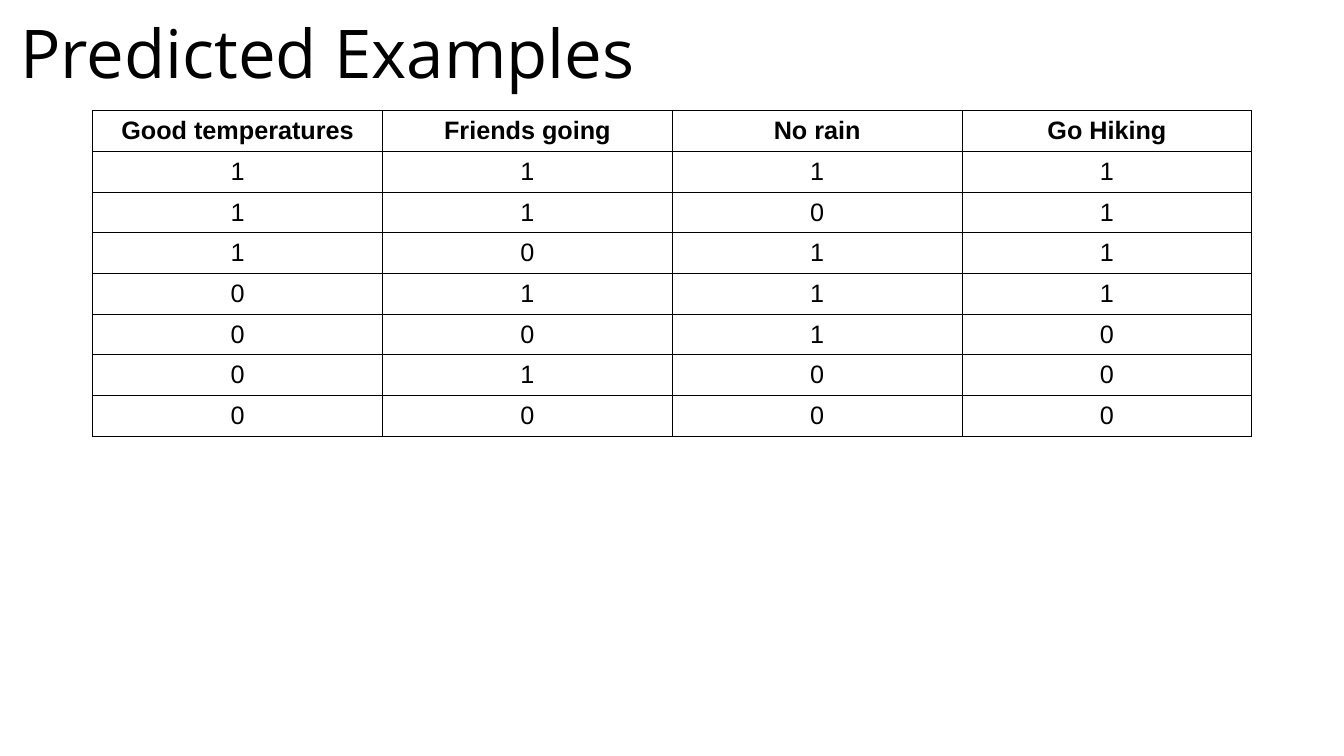
from lxml.etree import SubElement
from pptx import Presentation
from pptx.dml.color import RGBColor
from pptx.enum.text import MSO_ANCHOR as Anchor, MSO_AUTO_SIZE as Fit, PP_ALIGN as Align
from pptx.oxml.ns import qn
from pptx.util import Pt

BLACK = RGBColor(0, 0, 0)
HEADS = ["Good temperatures", "Friends going", "No rain", "Go Hiking"]
CASES = ["1111", "1101", "1011", "0111", "0010", "0100", "0000"]
ROWS = [HEADS] + [list(case) for case in CASES]
COL, ROW = Pt(207), Pt(29.05)


def style(item, form):
    for key, val in form.items():
        setattr(item, key, val)


def write(para, text, size, face, bold=False):
    run = para.add_run()
    run.text = text
    style(run.font, {"size": Pt(size), "name": face, "bold": bold})
    run.font.color.rgb = BLACK


deck = Presentation()
style(deck, {"slide_width": Pt(960), "slide_height": Pt(540)})
slide = deck.slides.add_slide(deck.slide_layouts[5])

title = slide.shapes.title
style(title, {"left": 0, "top": 0, "width": Pt(960), "height": Pt(81.36)})
inset = Pt(14.4)
style(title.text_frame, {
    "margin_left": inset, "margin_right": inset,
    "margin_top": inset, "margin_bottom": inset,
    "vertical_anchor": Anchor.MIDDLE, "word_wrap": True,
    "auto_size": Fit.SHAPE_TO_FIT_TEXT,
})
para = title.text_frame.paragraphs[0]
style(para, {"alignment": Align.LEFT, "line_spacing": 0.9})
write(para, "Predicted Examples", 48, "Open Sans")

frame = slide.shapes.add_table(
    len(ROWS), len(HEADS), Pt(66.24), Pt(79.2), COL * len(HEADS), ROW * len(ROWS))
table = frame.table
style(table, {"first_row": False, "horz_banding": False})
for col in table.columns:
    col.width = COL
for r, vals in enumerate(ROWS):
    table.rows[r].height = ROW
    for c, val in enumerate(vals):
        cell = table.cell(r, c)
        cell.vertical_anchor = Anchor.MIDDLE
        para = cell.text_frame.paragraphs[0]
        para.alignment = Align.CENTER
        write(para, val, 18, "Arial", r == 0)
        props = cell._tc.get_or_add_tcPr()
        for side in ("lnL", "lnR", "lnT", "lnB"):
            line = SubElement(props, qn(f"a:{side}"), w=str(Pt(0.75)))
            fill = SubElement(line, qn("a:solidFill"))
            SubElement(fill, qn("a:srgbClr"), val=str(BLACK))
        cell.fill.background()

deck.save("out.pptx")
